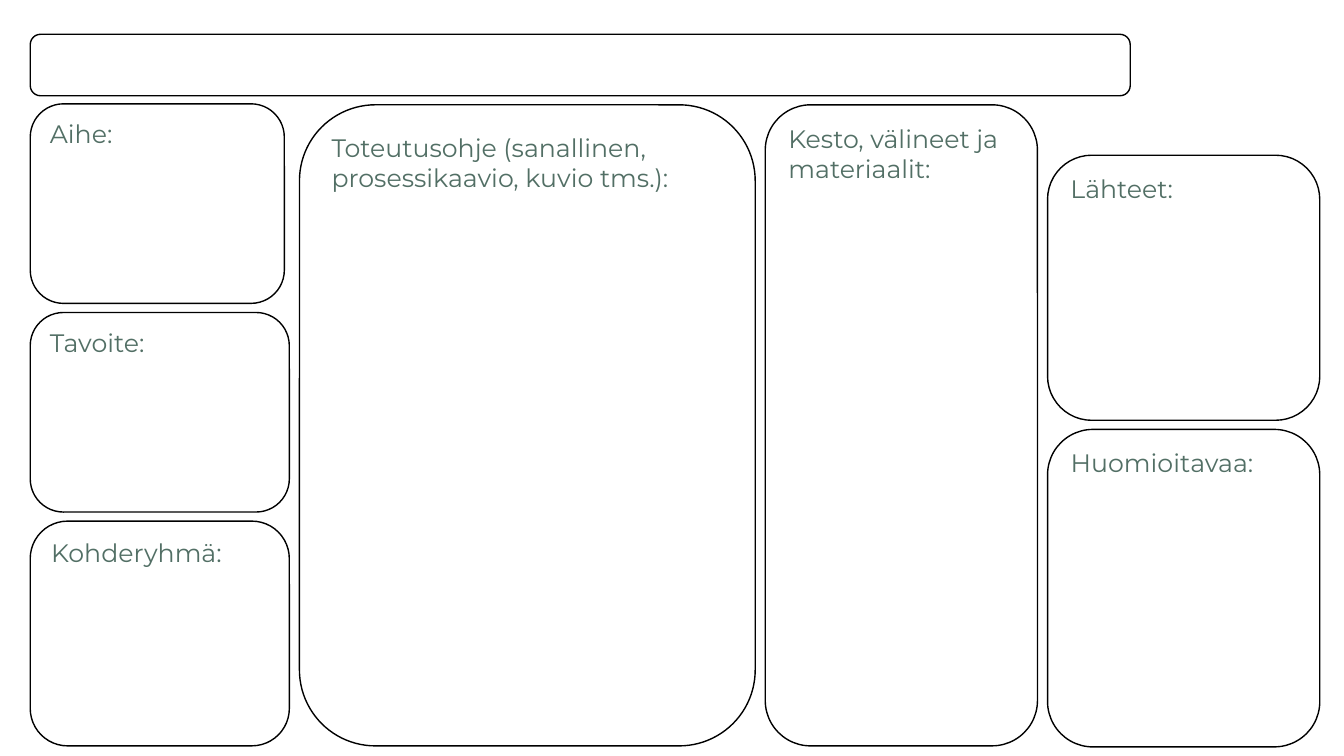
import pptx
import pptx.dml.color
import pptx.enum.shapes
import pptx.enum.text
import pptx.util

SLIDE_W, SLIDE_H = 13.33, 7.5
MARGIN = 0.3
COLUMN_GAP, ROW_GAP = 0.1, 0.09
INK, PAPER, LABEL = "000000", "FFFFFF", "526F65"

# Each column: width, top, and its boxes as (label, height, width trimmed off)
COLUMNS = [
    (2.57, 1.03, [("Aihe:", 1.98, 0.05),
                  ("Tavoite:", 1.98, 0),
                  ("Kohderyhmä:", 2.23, 0)]),
    (4.52, 1.04, [("Toteutusohje (sanallinen, prosessikaavio, kuvio tms.):", 6.36, 0)]),
    (2.7, 1.04, [("Kesto, välineet ja materiaalit:", 6.36, 0)]),
    (2.7, 1.54, [("Lähteet:", 2.63, 0),
                 ("Huomioitavaa:", 3.15, 0)]),
]


def rgb(value):
    return pptx.dml.color.RGBColor.from_string(value)


def add_box(s, left, top, width, height, label=""):
    """Rounded, outlined box with an optional label at its top left."""
    sp = s.shapes.add_shape(
        pptx.enum.shapes.MSO_SHAPE.ROUNDED_RECTANGLE,
        *(pptx.util.Inches(v) for v in (left, top, width, height)))
    sp.shadow.inherit = False
    sp.fill.solid()
    sp.fill.fore_color.rgb = rgb(PAPER)
    sp.line.color.rgb = rgb(INK)
    sp.line.width = pptx.util.Pt(1)
    if label:
        tf = sp.text_frame
        tf.word_wrap = True
        tf.vertical_anchor = pptx.enum.text.MSO_ANCHOR.TOP
        p = tf.paragraphs[0]
        p.text = label
        p.alignment = pptx.enum.text.PP_ALIGN.LEFT
        p.font.name = "Montserrat"
        p.font.size = pptx.util.Pt(18)
        p.font.color.rgb = rgb(LABEL)


def add_column(s, left, top, width, boxes):
    """Stack boxes downwards with equal gaps."""
    for label, height, trim in boxes:
        add_box(s, left, top, width - trim, height, label)
        top += height + ROW_GAP


def main():
    prs = pptx.Presentation()
    prs.slide_width = pptx.util.Inches(SLIDE_W)
    prs.slide_height = pptx.util.Inches(SLIDE_H)
    s = prs.slides.add_slide(prs.slide_layouts[6])

    # Planning columns
    left = MARGIN
    for width, top, boxes in COLUMNS:
        add_column(s, left, top, width, boxes)
        left += width + COLUMN_GAP

    # Empty title bar
    add_box(s, MARGIN, 0.34, 10.91, 0.61)

    prs.save("out.pptx")


if __name__ == "__main__":
    main()
